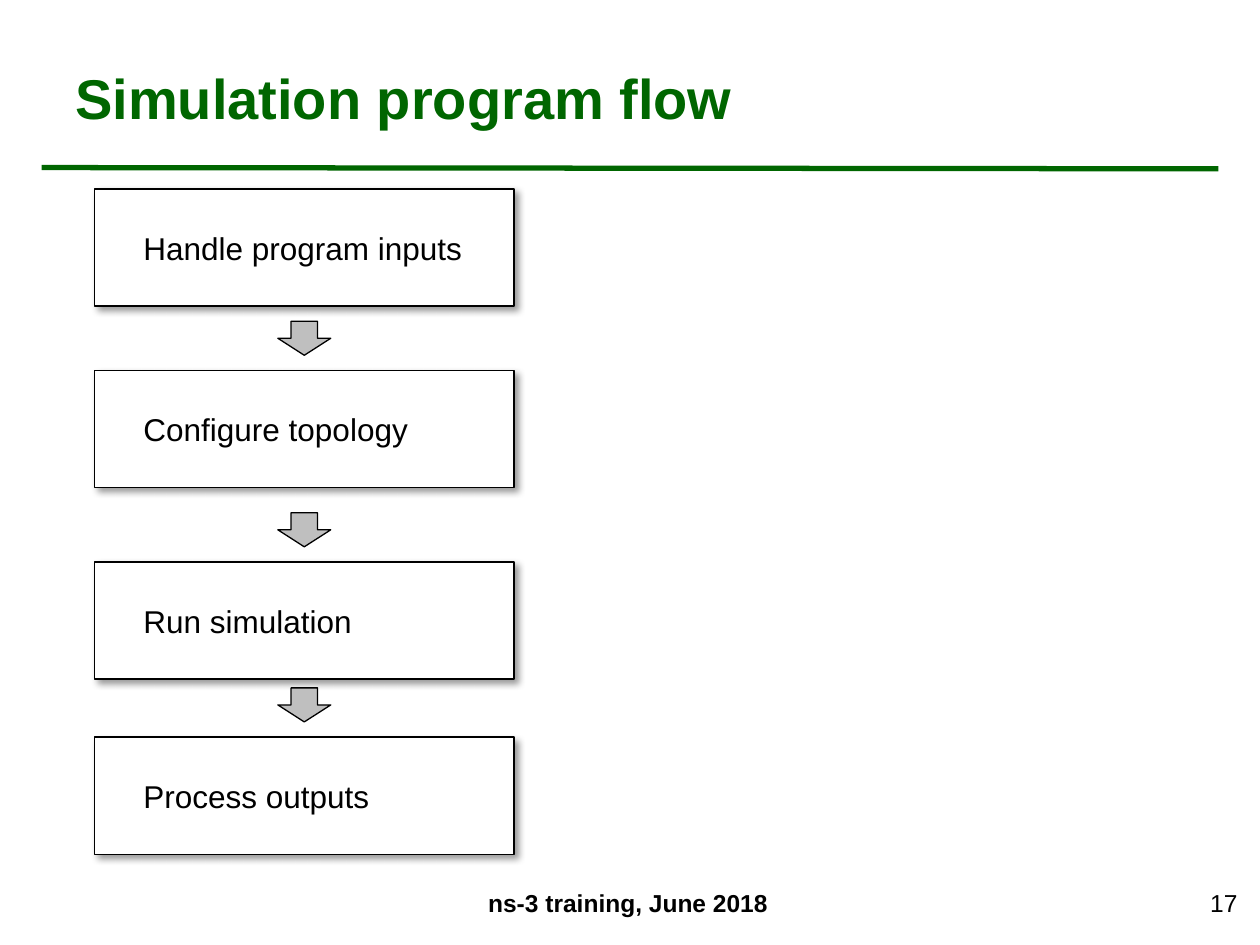
from lxml import etree
from pptx import Presentation
from pptx.dml.color import RGBColor
from pptx.enum.shapes import MSO_CONNECTOR, MSO_SHAPE
from pptx.enum.text import MSO_ANCHOR, MSO_AUTO_SIZE, PP_ALIGN
from pptx.oxml.ns import qn
from pptx.util import Inches, Pt

RECT, DOWN_ARROW = MSO_SHAPE.RECTANGLE, MSO_SHAPE.DOWN_ARROW
STRAIGHT = MSO_CONNECTOR.STRAIGHT
TOP, MIDDLE = MSO_ANCHOR.TOP, MSO_ANCHOR.MIDDLE
LEFT, CENTER, RIGHT = PP_ALIGN.LEFT, PP_ALIGN.CENTER, PP_ALIGN.RIGHT
FIT_SHAPE = MSO_AUTO_SIZE.SHAPE_TO_FIT_TEXT

GREEN = RGBColor(0x00, 0x66, 0x00)
BLACK = RGBColor(0x00, 0x00, 0x00)
WHITE = RGBColor(0xFF, 0xFF, 0xFF)
GRAY = RGBColor(0xBF, 0xBF, 0xBF)

TITLE = {"size": Pt(32), "bold": True}
STEP = {"size": Pt(18), "bold": False}
FOOTER = {"size": Pt(14), "bold": True}
NUMBER = {"size": Pt(14), "bold": False}

STEPS = [
    ("Handle program inputs", 1.5, 2.75),
    ("Configure topology", 2.94, 2.32),
    ("Run simulation", 4.46, 1.87),
    ("Process outputs", 5.85, 2.01),
]
STEP_H = 0.93
LABEL_H = 0.4
LABEL_INDENT = 0.29
ARROW_W, ARROW_H = 0.42, 0.27
ARROW_RISE = 0.39


def add_text(slide, box, text, fmt, color=BLACK, align=LEFT, anchor=TOP, wrap=True):
    sp = slide.shapes.add_textbox(*map(Inches, box))
    tf = sp.text_frame
    tf.word_wrap = wrap
    tf.vertical_anchor = anchor
    p = tf.paragraphs[0]
    p.alignment = align
    r = p.add_run()
    r.text = text
    for name, value in {"name": "Arial", **fmt}.items():
        setattr(r.font, name, value)
    r.font.color.rgb = color
    return sp


def add_outlined(slide, kind, box, fill):
    sp = slide.shapes.add_shape(kind, *map(Inches, box))
    sp.shadow.inherit = False
    sp.fill.solid()
    sp.fill.fore_color.rgb = fill
    sp.line.color.rgb = BLACK
    sp.line.width = Pt(0.75)
    return sp


def add_shadow(sp):
    effects = sp._element.spPr.find(qn("a:effectLst"))
    shadow = etree.SubElement(
        effects, qn("a:outerShdw"), blurRad=str(Pt(4)), dist=str(Pt(3)),
        dir=str(45 * 60000), algn="tl", rotWithShape="0")
    color = etree.SubElement(shadow, qn("a:srgbClr"), val=str(BLACK))
    etree.SubElement(color, qn("a:alpha"), val="40000")


def add_header(slide, box):
    x, y, w, h = box
    rule = slide.shapes.add_connector(
        STRAIGHT, *map(Inches, (x, y + h, x + w, y + h + 0.01)))
    rule.line.color.rgb = GREEN
    rule.line.width = Pt(3)
    etree.SubElement(rule._element.spPr, qn("a:effectLst"))
    add_text(slide, (x + 0.17, y, 8.97, 0.94), "Simulation program flow",
             TITLE, color=GREEN, anchor=MIDDLE)


def add_flow(slide, x, w):
    for i, (label, y, label_w) in enumerate(STEPS):
        add_shadow(add_outlined(slide, RECT, (x, y, w, STEP_H), WHITE))
        label_box = (x + LABEL_INDENT, y + (STEP_H - LABEL_H) / 2, label_w, LABEL_H)
        sp = add_text(slide, label_box, label, STEP, wrap=False)
        sp.text_frame.auto_size = FIT_SHAPE
        if i:
            arrow_box = (x + (w - ARROW_W) / 2, y - ARROW_RISE, ARROW_W, ARROW_H)
            add_outlined(slide, DOWN_ARROW, arrow_box, GRAY)


def add_footer(slide, y, h):
    add_text(slide, (3.42, y, 3.13, h), "ns-3 training, June 2018", FOOTER, align=CENTER)
    add_text(slide, (7.62, y, 2.3, h), "17", NUMBER, align=RIGHT)


def main():
    prs = Presentation()
    prs.slide_width, prs.slide_height = Inches(10), Inches(7.5)
    slide = prs.slides.add_slide(prs.slide_layouts[6])
    add_header(slide, (0.33, 0.3, 9.34, 1.03))
    add_flow(slide, 0.75, 3.33)
    add_footer(slide, 7, 0.5)
    prs.save("out.pptx")


if __name__ == "__main__":
    main()
